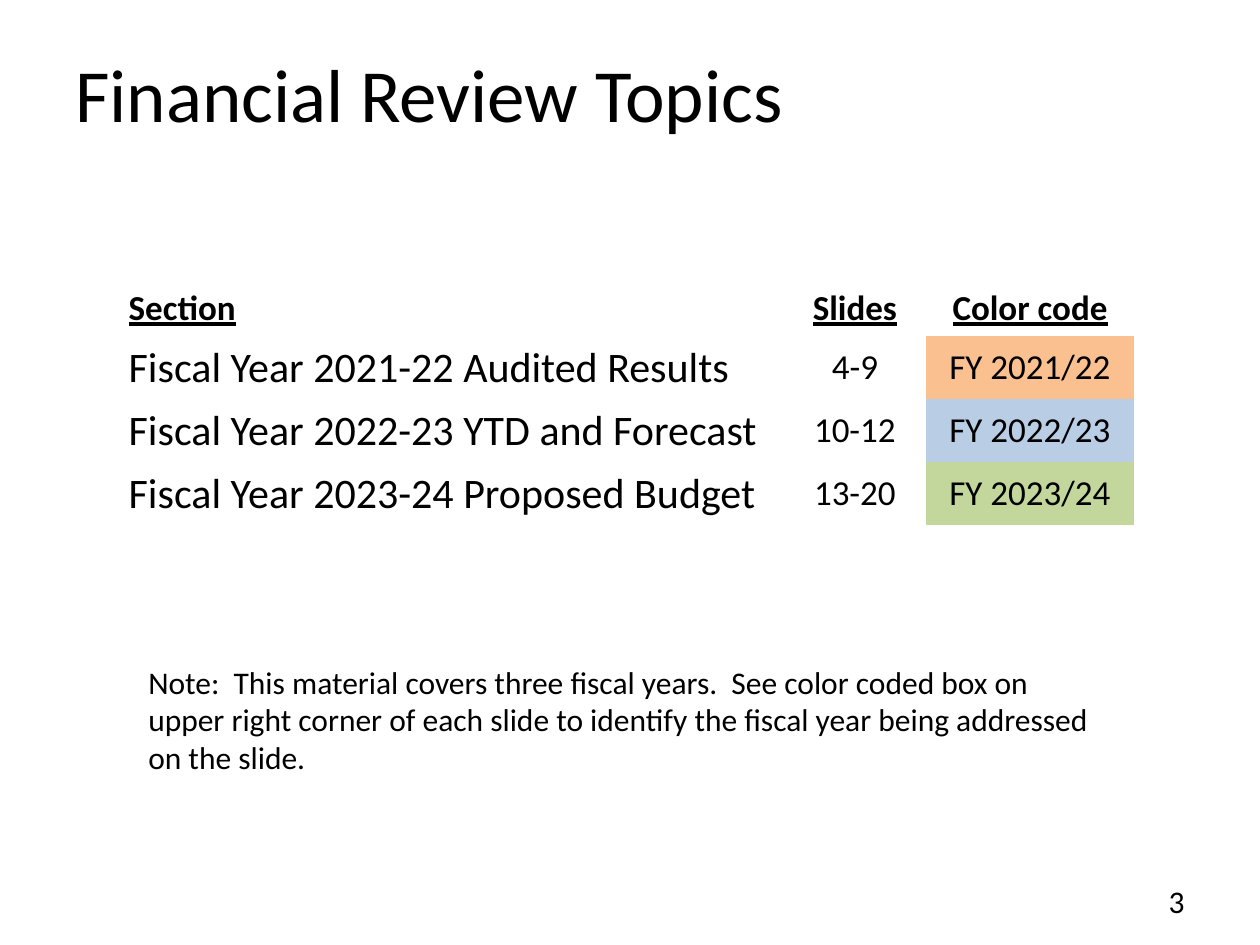
from pptx import Presentation
from pptx.dml.color import RGBColor
from pptx.enum.text import MSO_ANCHOR, PP_ALIGN
from pptx.oxml.ns import qn
from pptx.util import Cm, Pt

BLACK = RGBColor(0x00, 0x00, 0x00)
ORANGE = RGBColor(0xFA, 0xC0, 0x90)
BLUE = RGBColor(0xB9, 0xCD, 0xE5)
GREEN = RGBColor(0xC3, 0xD6, 0x9B)

PLAIN_GRID = "{2D5ABB26-0587-4C30-8999-92F81FD0307C}"  # no style, no grid
WIDTHS = (13.46, 2.87, 4.19)
HEAD = ("Section", "Slides", "Color code")
TOPICS = (
    ("Fiscal Year 2021-22 Audited Results", "4-9", "FY 2021/22", ORANGE),
    ("Fiscal Year 2022-23 YTD and Forecast", "10-12", "FY 2022/23", BLUE),
    ("Fiscal Year 2023-24 Proposed Budget", "13-20", "FY 2023/24", GREEN),
)
NOTE = ("Note:  This material covers three fiscal years.  See color coded box on "
        "upper right corner of each slide to identify the fiscal year being "
        "addressed on the slide.")


class Page:
    font = "Calibri"
    color = BLACK

    def __init__(self, slide):
        self.slide = slide

    def add_run(self, frame, text, size, align=PP_ALIGN.LEFT, strong=False):
        """Put one run in the first paragraph; strong is bold and underlined."""
        para = frame.paragraphs[0]
        para.alignment = align
        run = para.add_run()
        run.text = text
        font = run.font
        font.name, font.size = self.font, Pt(size)
        font.bold = font.underline = strong
        font.color.rgb = self.color

    def text(self, box, text, size, align=PP_ALIGN.LEFT,
             anchor=MSO_ANCHOR.TOP, inset=0.13):
        frame = self.slide.shapes.add_textbox(*map(Cm, box)).text_frame
        frame.word_wrap = True
        frame.vertical_anchor = anchor
        frame.margin_top = Cm(inset)
        self.add_run(frame, text, size, align)

    def cell(self, cell, text, size, align, anchor, fill=None, strong=False):
        cell.vertical_anchor = anchor
        if fill is None:
            cell.fill.background()
        else:
            cell.fill.solid()
            cell.fill.fore_color.rgb = fill
        self.add_run(cell.text_frame, text, size, align, strong)

    def table(self, left, top, head, topics, widths, tall, row):
        high = tall + row * len(topics)
        box = map(Cm, (left, top, sum(widths), high))
        frame = self.slide.shapes.add_table(len(topics) + 1, len(head), *box)
        grid = frame.table
        grid.horz_banding = False
        grid._tbl.tblPr.find(qn("a:tableStyleId")).text = PLAIN_GRID
        for col, width in zip(grid.columns, widths):
            col.width = Cm(width)
        for line in grid.rows:
            line.height = Cm(row)
        grid.rows[0].height = Cm(tall)

        aligns = (PP_ALIGN.LEFT, PP_ALIGN.CENTER, PP_ALIGN.CENTER)
        for c, (label, align) in enumerate(zip(head, aligns)):
            self.cell(grid.cell(0, c), label, 20, align, MSO_ANCHOR.BOTTOM, strong=True)
        for r, (name, pages, code, fill) in enumerate(topics, 1):
            self.cell(grid.cell(r, 0), name, 24, aligns[0], MSO_ANCHOR.TOP)
            self.cell(grid.cell(r, 1), pages, 20, aligns[1], MSO_ANCHOR.MIDDLE)
            self.cell(grid.cell(r, 2), code, 20, aligns[2], MSO_ANCHOR.MIDDLE, fill)


def main():
    deck = Presentation()
    deck.slide_width, deck.slide_height = Cm(25.4), Cm(19.05)
    page = Page(deck.slides.add_slide(deck.slide_layouts[6]))
    page.text((1.27, 0.76, 22.86, 3.18), "Financial Review Topics", 42.9, inset=0.2)
    page.text((18.21, 17.65, 5.92, 1.02), "3", 18, PP_ALIGN.RIGHT, MSO_ANCHOR.MIDDLE)
    page.table(2.34, 5.41, HEAD, TOPICS, WIDTHS, tall=1.37, row=1.27)
    page.text((2.74, 13.23, 19.48, 2.57), NOTE, 18)
    deck.save("out.pptx")


if __name__ == "__main__":
    main()
